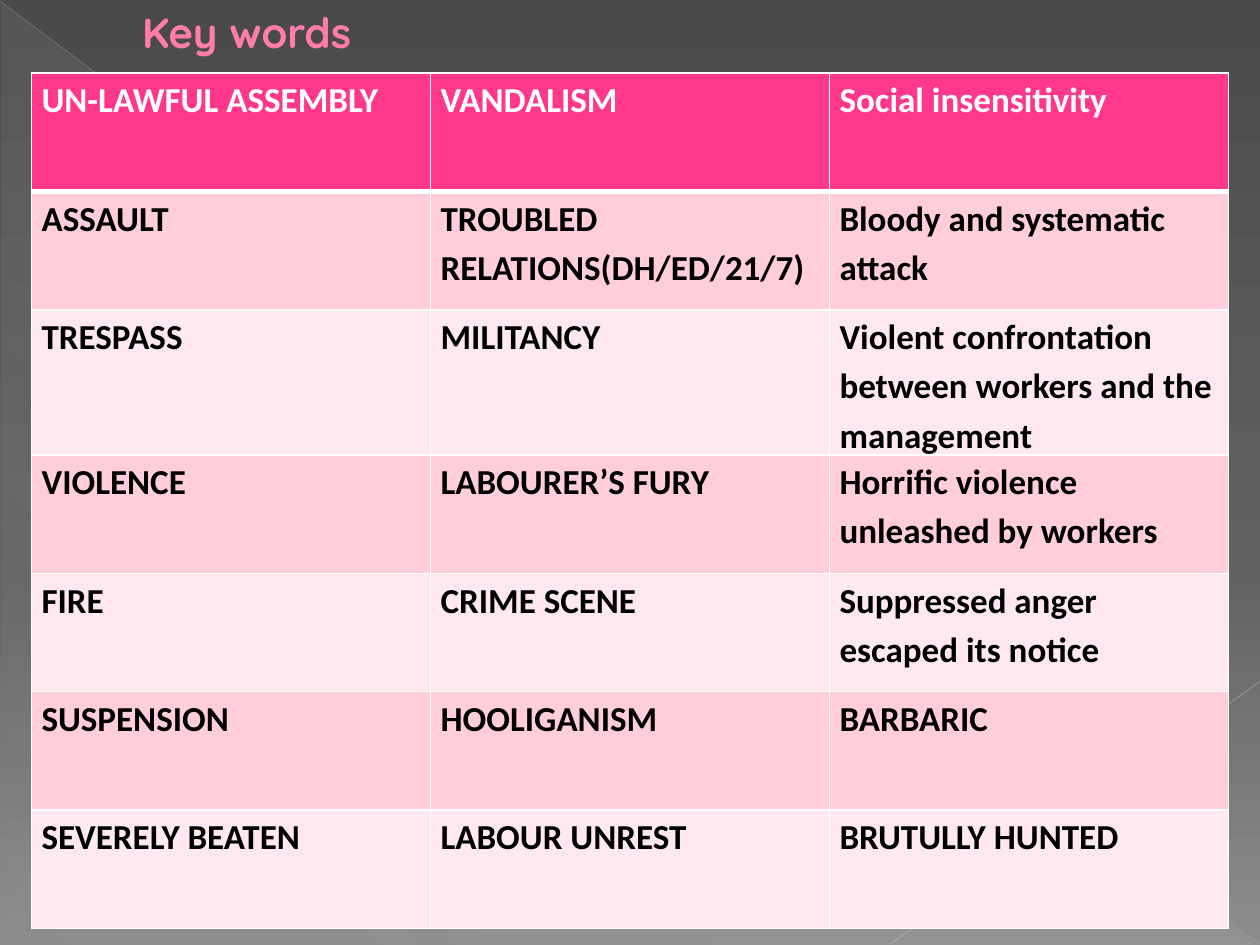
from dataclasses import dataclass
from typing import Any

from lxml import etree
from pptx import Presentation
from pptx import util as u
from pptx.dml.color import RGBColor
from pptx.enum import shapes, text
from pptx.oxml import ns


@dataclass(frozen=True)
class Theme:
    display: str = "Quicksand"
    body: str = "Calibri"
    title_size: float = 24
    cell_size: float = 20
    title: str = "FF7DA7"
    title_edge: str = "B12761"
    white: str = "FFFFFF"
    black: str = "000000"
    header: str = "FF388C"
    bands: tuple[str, str] = ("FFCEDA", "FFE8EE")


@dataclass(frozen=True)
class Stop:
    position: int
    color: str
    alpha: int = 100


@dataclass(frozen=True)
class Ray:
    start: tuple[float, float]
    end: tuple[float, float]
    color: str
    width: float
    alpha: int


THEME = Theme()
BACKDROP = (Stop(0, "4A4A4A"), Stop(60, "626262"), Stop(100, "8C8C8C"))
SHEEN = (Stop(0, "D2D2D2", 10), Stop(70, "D2D2D2", 8), Stop(100, "D2D2D2", 1))
RAYS = (
    Ray((0, 0.01), (9.99, 7.49), "BFBFBF", 0.39, 35),
    Ray((10, 5.41), (7.07, 7.49), "C6C6C6", 0.47, 45),
)
KEYWORDS = (
    ("UN-LAWFUL ASSEMBLY", "VANDALISM", "Social insensitivity"),
    ("ASSAULT", "TROUBLED RELATIONS(DH/ED/21/7)", "Bloody and systematic attack"),
    ("TRESPASS", "MILITANCY", "Violent confrontation between workers and the management"),
    ("VIOLENCE", "LABOURER’S FURY", "Horrific violence unleashed by workers"),
    ("FIRE", "CRIME SCENE", "Suppressed anger escaped its notice"),
    ("SUSPENSION", "HOOLIGANISM", "BARBARIC"),
    ("SEVERELY BEATEN", "LABOUR UNREST", "BRUTULLY HUNTED"),
)


def apply(target: Any, values: dict[str, Any]) -> None:
    for name, value in values.items():
        setattr(target, name, value)


def child(parent: Any, tag: str, **attributes: Any) -> Any:
    values = {name: str(value) for name, value in attributes.items()}
    return etree.SubElement(parent, ns.qn(tag), values)


def add_color(parent: Any, color: str, alpha: int = 100) -> None:
    node = child(parent, "a:srgbClr", val=color)
    if alpha < 100:
        child(node, "a:alpha", val=alpha * 1000)


def add_line(parent: Any, tag: str, color: str, width: float, alpha: int = 100) -> Any:
    line = child(parent, tag, w=int(u.Pt(width)))
    add_color(child(line, "a:solidFill"), color, alpha)
    return line


def set_gradient(owner: Any, fill: Any, stops: tuple[Stop, ...], angle: int) -> None:
    fill.gradient()
    gradient = next(owner.iter(ns.qn("a:gradFill")))
    gradient.clear()
    stop_list = child(gradient, "a:gsLst")
    for stop in stops:
        add_color(child(stop_list, "a:gs", pos=stop.position * 1000), stop.color, stop.alpha)
    child(gradient, "a:lin", ang=angle * 60000, scaled=0)


def add_span(para: Any, wording: str, font: str, size: float, color: str) -> Any:
    span = para.add_run()
    span.text = wording
    apply(span.font, {"name": font, "size": u.Pt(size), "bold": True})
    span.font.color.rgb = RGBColor.from_string(color)
    return span


def draw_backdrop(page: Any) -> None:
    set_gradient(page.element, page.background.fill, BACKDROP, 90)
    triangle = page.shapes.add_shape(
        shapes.MSO_SHAPE.RIGHT_TRIANGLE, *map(u.Inches, (0.01, 0.02, 9.98, 7.48)))
    triangle.shadow.inherit = False
    triangle.line.fill.background()
    set_gradient(triangle.element, triangle.fill, SHEEN, 133)


def draw_ray(page: Any, ray: Ray) -> None:
    connector = page.shapes.add_connector(
        shapes.MSO_CONNECTOR.STRAIGHT, *map(u.Inches, ray.start + ray.end))
    properties = connector.element.spPr
    add_line(properties, "a:ln", ray.color, ray.width, ray.alpha)
    child(properties, "a:effectLst")


def draw_title(page: Any, wording: str) -> None:
    box = page.shapes.add_textbox(*map(u.Inches, (0.5, 0, 9, 0.5)))
    apply(box.text_frame, {"word_wrap": True, "vertical_anchor": text.MSO_ANCHOR.MIDDLE})
    para = box.text_frame.paragraphs[0]
    para._p.get_or_add_pPr().set("marL", str(int(u.Inches(0.53))))
    span = add_span(para, wording, THEME.display, THEME.title_size, THEME.title)
    # The outline has to precede the text fill
    properties = span.font._element
    properties.insert(0, add_line(properties, "a:ln", THEME.title_edge, 0.5))


def draw_cell(cell: Any, wording: str, row: int) -> None:
    apply(cell, {"margin_left": u.Inches(0.08), "margin_right": u.Inches(0.07),
                 "margin_top": 0, "margin_bottom": 0})
    # Borders come before the fill; a heavy rule closes the header
    widths = {"L": 1, "R": 1, "T": 3 if row == 1 else 1, "B": 3 if row == 0 else 1}
    for side, width in widths.items():
        add_line(cell._tc.get_or_add_tcPr(), f"a:ln{side}", THEME.white, width)
    cell.fill.solid()
    shade = THEME.bands[(row - 1) % 2] if row else THEME.header
    cell.fill.fore_color.rgb = RGBColor.from_string(shade)
    para = cell.text_frame.paragraphs[0]
    para.line_spacing = 1.15
    add_span(para, wording, THEME.body, THEME.cell_size, THEME.black if row else THEME.white)


def draw_table(page: Any) -> None:
    row_count, column_count = len(KEYWORDS), len(KEYWORDS[0])
    row_height = 0.94
    table = page.shapes.add_table(
        row_count, column_count,
        *map(u.Inches, (0.25, 0.58, 9.5, row_height * row_count))).table
    table.horz_banding = False
    for row in table.rows:
        row.height = u.Inches(row_height)
    for row, words in enumerate(KEYWORDS):
        for column, wording in enumerate(words):
            draw_cell(table.cell(row, column), wording, row)


def main() -> None:
    deck = Presentation()
    apply(deck, {"slide_width": u.Inches(10), "slide_height": u.Inches(7.5)})
    page = deck.slides.add_slide(deck.slide_layouts[6])
    # Background decoration
    draw_backdrop(page)
    for ray in RAYS:
        draw_ray(page, ray)
    # Title and keyword grid
    draw_title(page, "Key words")
    draw_table(page)
    deck.save("out.pptx")


if __name__ == "__main__":
    main()
